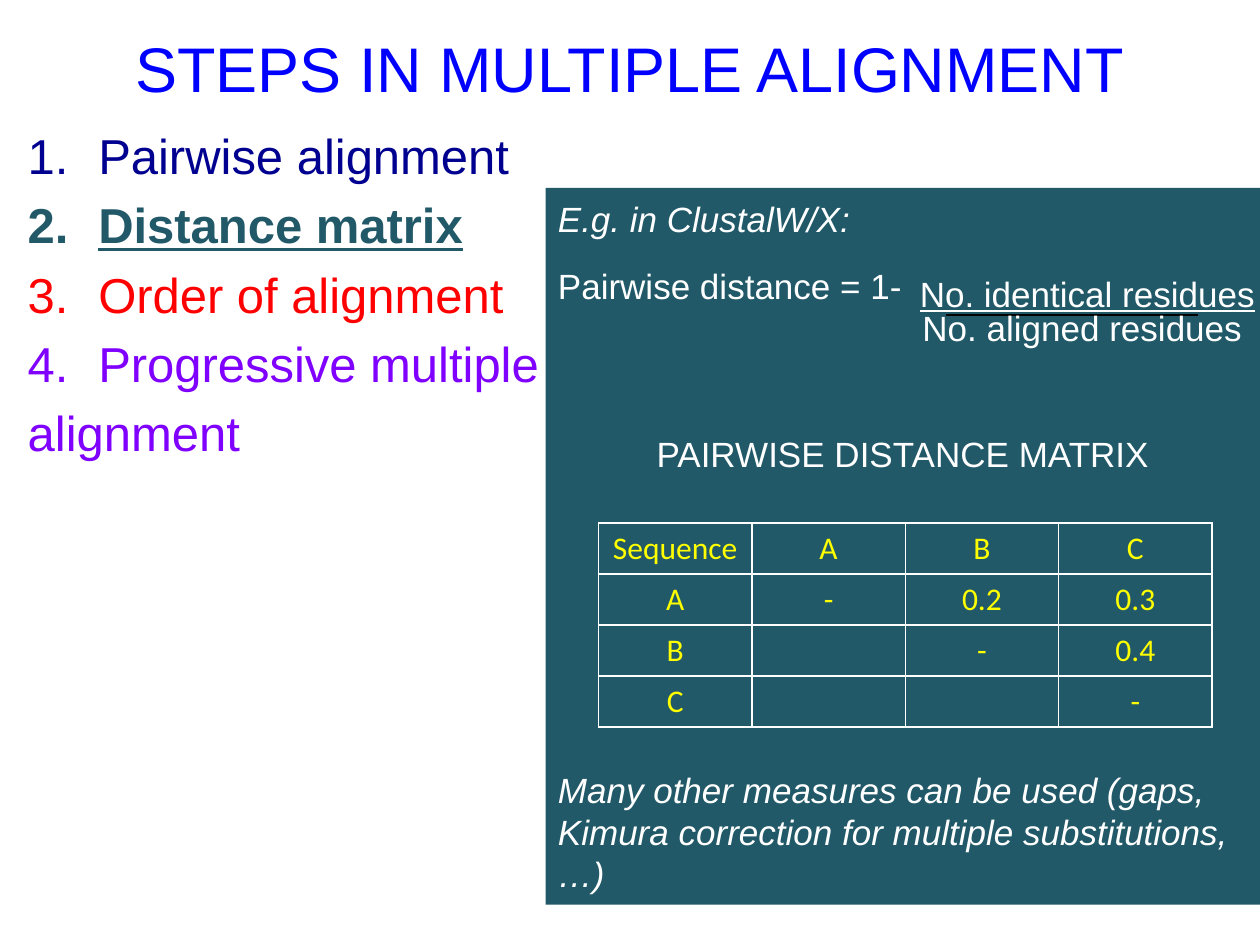
from lxml import etree
from pptx import Presentation
from pptx.dml.color import RGBColor
from pptx.enum.shapes import MSO_CONNECTOR, MSO_SHAPE
from pptx.enum.text import MSO_ANCHOR, MSO_AUTO_SIZE, PP_ALIGN
from pptx.oxml.ns import qn
from pptx.util import Inches, Pt

COLORS = {
    "title": "0000FF", "pairwise": "000090", "teal": "215968", "order": "FF0000",
    "progressive": "8000FF", "white": "FFFFFF", "black": "000000", "table": "FFFF00",
}
COLUMNS, ROWS = 100, 75  # grid over the slide


class SlideBuilder:
    """Holds the style and the current slide."""

    font = "Arial"

    def __init__(self, prs):
        self.cell_w = prs.slide_width / COLUMNS
        self.cell_h = prs.slide_height / ROWS
        self.slide = prs.slides.add_slide(prs.slide_layouts[1])
        self.shapes = self.slide.shapes

    def box(self, col, row, cols, rows):
        return (round(col * self.cell_w), round(row * self.cell_h),
                round(cols * self.cell_w), round(rows * self.cell_h))

    def place(self, shape, *area):
        shape.left, shape.top, shape.width, shape.height = self.box(*area)

    def style(self, paragraph, size, color, align=None, name=None, **flags):
        font = paragraph.font
        font.name, font.size = name or self.font, Pt(size)
        font.color.rgb = RGBColor.from_string(COLORS[color])
        for flag, value in flags.items():
            setattr(font, flag, value)
        if align is not None:
            paragraph.alignment = align

    def paragraphs(self, frame, texts):
        frame.text = "\n".join(texts)
        return frame.paragraphs

    def title(self, text, *area):
        title = self.shapes.title
        self.place(title, *area)
        title.text_frame.text = text
        title.text_frame.vertical_anchor = MSO_ANCHOR.MIDDLE
        self.style(title.text_frame.paragraphs[0], 36, "title", PP_ALIGN.CENTER)

    def steps(self, items, *area):
        """Items are (text, color, numbered, emphasized)."""
        body = self.slide.placeholders[1]
        self.place(body, *area)
        lines = self.paragraphs(body.text_frame, [item[0] for item in items])
        for line, (_, color, numbered, emphasized) in zip(lines, items):
            line.line_spacing = Pt(33.5)
            line.space_before, line.space_after = Pt(0), Pt(6)
            props = line._p.get_or_add_pPr()
            hang = Inches(0.56) if numbered else 0
            props.set("marL", str(hang))
            props.set("indent", str(-hang))
            if numbered:
                etree.SubElement(props, qn("a:buFont"), typeface="+mj-lt")
                etree.SubElement(props, qn("a:buAutoNum"), type="arabicPeriod")
            else:
                etree.SubElement(props, qn("a:buNone"))
            self.style(line, 28, color, bold=emphasized, underline=emphasized)

    def panel(self, items, *area):
        """Items are (text, space before, italic, alignment)."""
        panel = self.shapes.add_shape(MSO_SHAPE.RECTANGLE, *self.box(*area))
        panel.shadow.inherit = False
        panel.fill.solid()
        panel.fill.fore_color.rgb = RGBColor.from_string(COLORS["teal"])
        panel.line.fill.background()
        frame = panel.text_frame
        frame.word_wrap, frame.vertical_anchor = True, MSO_ANCHOR.MIDDLE
        lines = self.paragraphs(frame, [item[0] for item in items])
        for line, (_, before, italic, align) in zip(lines, items):
            line.line_spacing, line.space_before = Pt(24), Pt(before)
            self.style(line, 20, "white", align, italic=italic)

    def label(self, text, *area, underline=False):
        frame = self.shapes.add_textbox(*self.box(*area)).text_frame
        frame.text = text
        frame.word_wrap, frame.vertical_anchor = False, MSO_ANCHOR.MIDDLE
        frame.auto_size = MSO_AUTO_SIZE.SHAPE_TO_FIT_TEXT
        self.style(frame.paragraphs[0], 20, "white", PP_ALIGN.CENTER, underline=underline)

    def rule(self, col, row, cols):
        x, y, width, _ = self.box(col, row, cols, 0)
        line = self.shapes.add_connector(MSO_CONNECTOR.STRAIGHT, x, y, x + width, y)
        line.line.color.rgb = RGBColor.from_string(COLORS["black"])
        line.line.width = Pt(0.75)
        etree.SubElement(line._element.spPr, qn("a:effectLst"))

    def borders(self, cell, color):
        props = cell._tc.get_or_add_tcPr()
        for position, side in enumerate(("lnL", "lnR", "lnT", "lnB")):
            edge = etree.Element(qn(f"a:{side}"), w=str(Pt(1)))
            fill = etree.SubElement(edge, qn("a:solidFill"))
            etree.SubElement(fill, qn("a:srgbClr"), val=COLORS[color])
            props.insert(position, edge)

    def matrix(self, rows, *area):
        table = self.shapes.add_table(len(rows), len(rows[0]), *self.box(*area)).table
        table.first_row = table.horz_banding = False
        for r, row in enumerate(rows):
            for c, text in enumerate(row):
                cell = table.cell(r, c)
                cell.text = text
                cell.fill.background()
                self.borders(cell, "white")
                self.style(cell.text_frame.paragraphs[0], 18, "table",
                           PP_ALIGN.CENTER, "Calibri")


def main():
    prs = Presentation()
    prs.slide_width, prs.slide_height = Inches(10), Inches(7.5)
    page = SlideBuilder(prs)

    # Title and numbered steps
    page.title("STEPS IN MULTIPLE ALIGNMENT", 7.5, -0.9, 85, 12.5)
    page.steps([
        ("Pairwise alignment", "pairwise", True, False),
        ("Distance matrix", "teal", True, True),
        ("Order of alignment", "order", True, False),
        ("Progressive multiple", "progressive", True, False),
        ("alignment", "progressive", False, False),
    ], 1.2, 9.5, 50, 27.9)

    # Distance panel
    page.panel([
        ("E.g. in ClustalW/X:", 0, True, PP_ALIGN.LEFT),
        ("Pairwise distance = 1-", 14, False, PP_ALIGN.LEFT),
        ("PAIRWISE DISTANCE MATRIX", 72, False, PP_ALIGN.CENTER),
        ("Many other measures can be used (gaps, Kimura correction for multiple "
         "substitutions, …)", 168, True, PP_ALIGN.LEFT),
    ], 43.3, 14.9, 56.7, 56.9)

    # Fraction of the distance formula
    page.rule(75.1, 25, 20)
    page.label("No. identical residues", 71.9, 21.1, 28.8, 4.4, underline=True)
    page.label("No. aligned residues", 72.1, 23.8, 27.6, 4.4)

    # Pairwise distance matrix
    page.matrix([
        ("Sequence", "A", "B", "C"),
        ("A", "-", "0.2", "0.3"),
        ("B", "", "-", "0.4"),
        ("C", "", "", "-"),
    ], 47.5, 41.5, 48.7, 16.2)

    prs.save("out.pptx")


if __name__ == "__main__":
    main()
